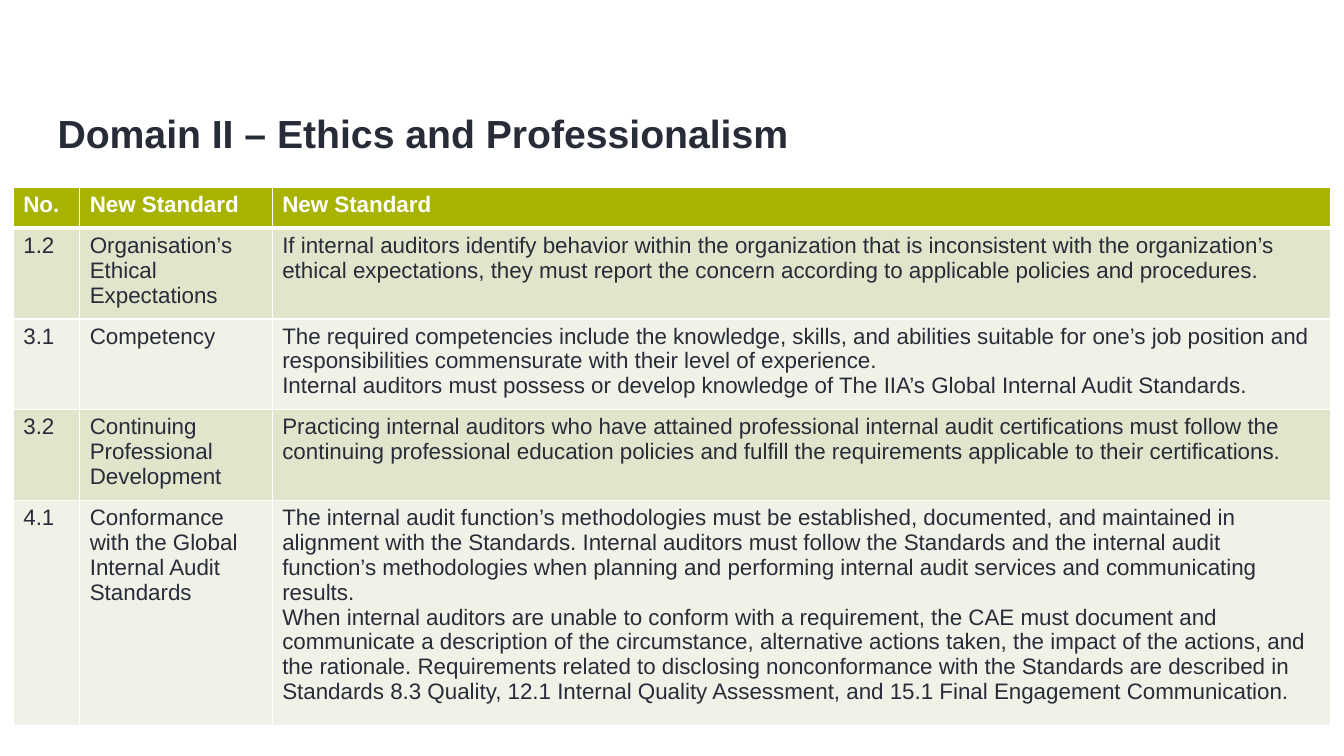
from dataclasses import dataclass

from lxml.etree import SubElement
from pptx import Presentation
from pptx.dml.color import RGBColor
from pptx.enum.text import MSO_ANCHOR
from pptx.oxml.ns import qn
from pptx.util import Pt


@dataclass(frozen=True)
class Theme:
    font: str = "Arial"
    title_size: int = 28
    table_size: int = 16
    ink: str = "282C38"
    white: str = "FFFFFF"
    header: str = "A8B300"
    bands: tuple = ("E1E5CC", "F1F2E7")


THEME = Theme()
COLUMN_WIDTHS = (47.5, 137.5, 756)
ROW_HEIGHTS = (29, 60, 60, 60, 150)
THIN_RULE, HEADER_RULE = 1, 3

STANDARDS = [
    ("No.", "New Standard", "New Standard"),
    ("1.2", "Organisation’s Ethical Expectations",
     "If internal auditors identify behavior within the organization that is inconsistent "
     "with the organization’s ethical expectations, they must report the concern according "
     "to applicable policies and procedures."),
    ("3.1", "Competency",
     "The required competencies include the knowledge, skills, and abilities suitable for "
     "one’s job position and responsibilities commensurate with their level of experience.\n"
     "Internal auditors must possess or develop knowledge of The IIA’s Global Internal "
     "Audit Standards."),
    ("3.2", "Continuing Professional Development",
     "Practicing internal auditors who have attained professional internal audit "
     "certifications must follow the continuing professional education policies and fulfill "
     "the requirements applicable to their certifications."),
    ("4.1", "Conformance with the Global Internal Audit Standards",
     "The internal audit function’s methodologies must be established, documented, and "
     "maintained in alignment with the Standards. Internal auditors must follow the "
     "Standards and the internal audit function’s methodologies when planning and "
     "performing internal audit services and communicating results.\n"
     "When internal auditors are unable to conform with a requirement, the CAE must document "
     "and communicate a description of the circumstance, alternative actions taken, the "
     "impact of the actions, and the rationale. Requirements related to disclosing "
     "nonconformance with the Standards are described in Standards 8.3 Quality, 12.1 Internal "
     "Quality Assessment, and 15.1 Final Engagement Communication."),
]


def write_text(frame, text, size, color, bold):
    """Fill a text frame, one paragraph for each line of text."""
    frame.text = text
    font_format = {"name": THEME.font, "size": Pt(size), "bold": bold}
    for para in frame.paragraphs:
        for span in para.runs:
            for name, value in font_format.items():
                setattr(span.font, name, value)
            span.font.color.rgb = RGBColor.from_string(color)


def add_title(page, text):
    box = page.shapes.add_textbox(Pt(34), Pt(0), Pt(788), Pt(115))
    frame_format = {"word_wrap": True, "vertical_anchor": MSO_ANCHOR.BOTTOM}
    for name, value in frame_format.items():
        setattr(box.text_frame, name, value)
    write_text(box.text_frame, text, THEME.title_size, THEME.ink, True)


def set_borders(cell, top, bottom):
    """Draw white cell borders; the lines must come before the fill in the XML."""
    properties = cell._tc.get_or_add_tcPr()
    widths = {"a:lnL": THIN_RULE, "a:lnR": THIN_RULE, "a:lnT": top, "a:lnB": bottom}
    for position, (tag, width) in enumerate(widths.items()):
        line = SubElement(properties, qn(tag), w=str(Pt(width)))
        fill = SubElement(line, qn("a:solidFill"))
        SubElement(fill, qn("a:srgbClr"), val=THEME.white)
        properties.insert(position, line)


def style_cell(cell, text, row_number):
    is_header = row_number == 0
    fill = THEME.header if is_header else THEME.bands[(row_number - 1) % 2]
    cell.fill.solid()
    cell.fill.fore_color.rgb = RGBColor.from_string(fill)
    color = THEME.white if is_header else THEME.ink
    write_text(cell.text_frame, text, THEME.table_size, color, is_header)
    set_borders(cell,
                top=HEADER_RULE if row_number == 1 else THIN_RULE,
                bottom=HEADER_RULE if is_header else THIN_RULE)


def add_standards_table(page, standards):
    table = page.shapes.add_table(
        len(standards), len(COLUMN_WIDTHS), Pt(9.5), Pt(134),
        Pt(sum(COLUMN_WIDTHS)), Pt(sum(ROW_HEIGHTS))).table
    for column, width in zip(table.columns, COLUMN_WIDTHS):
        column.width = Pt(width)
    for row, height in zip(table.rows, ROW_HEIGHTS):
        row.height = Pt(height)
    for row_number, texts in enumerate(standards):
        for column_number, text in enumerate(texts):
            style_cell(table.cell(row_number, column_number), text, row_number)


def main():
    deck = Presentation()
    deck.slide_width, deck.slide_height = Pt(960), Pt(540)
    page = deck.slides.add_slide(deck.slide_layouts[6])
    add_title(page, "Domain II – Ethics and Professionalism")
    add_standards_table(page, STANDARDS)
    deck.save("out.pptx")


if __name__ == "__main__":
    main()
